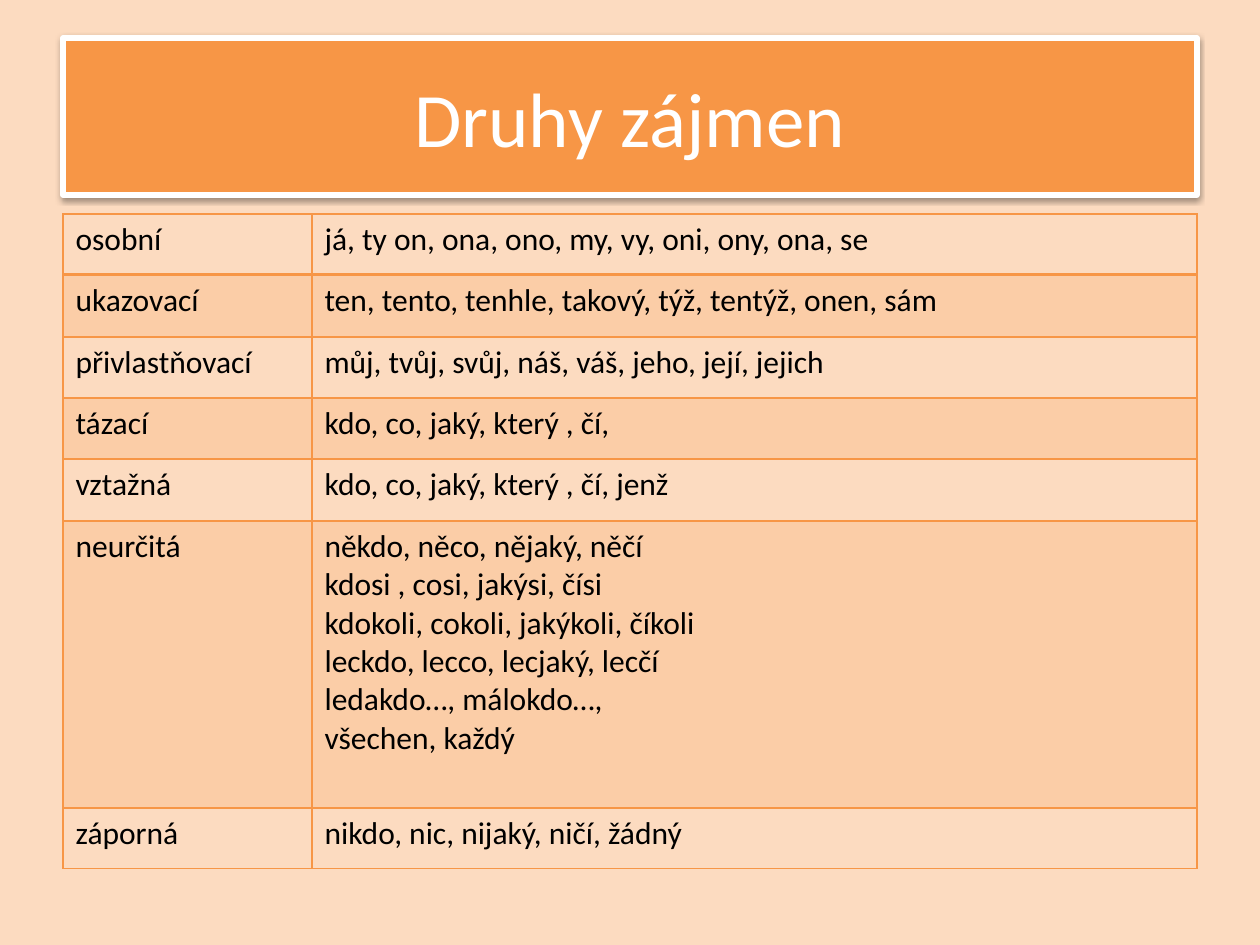
from dataclasses import dataclass

from lxml.etree import SubElement
from pptx import Presentation
from pptx.dml.color import RGBColor
from pptx.enum.shapes import MSO_SHAPE as Shape
from pptx.enum.text import MSO_ANCHOR as Anchor, PP_ALIGN as Align
from pptx.oxml import parse_xml
from pptx.oxml.ns import nsdecls, qn
from pptx.util import Pt

SCALE = 914400 / 126


@dataclass(frozen=True)
class Theme:
    font: str = "Calibri"
    background: str = "FCDBC0"
    accent: str = "F79646"
    light: str = "FFFFFF"
    dark: str = "000000"
    title_size: int = 44
    body_size: int = 18
    band_opacity: int = 20


THEME = Theme()

PRONOUNS = [
    ("osobní", "já, ty on, ona, ono, my, vy, oni, ony, ona, se"),
    ("ukazovací", "ten, tento, tenhle, takový, týž, tentýž, onen, sám"),
    ("přivlastňovací", "můj, tvůj, svůj, náš, váš, jeho, její, jejich"),
    ("tázací", "kdo, co, jaký, který , čí,"),
    ("vztažná", "kdo, co, jaký, který , čí, jenž"),
    ("neurčitá", "někdo, něco, nějaký, něčí\n"
                 "kdosi , cosi, jakýsi, čísi\n"
                 "kdokoli, cokoli, jakýkoli, číkoli\n"
                 "leckdo, lecco, lecjaký, lecčí\n"
                 "ledakdo…, málokdo…,\n"
                 "všechen, každý"),
    ("záporná", "nikdo, nic, nijaký, ničí, žádný"),
]
COLUMN_WIDTHS = [249, 885]
ROW_HEIGHTS = [61, 62, 61, 61, 62, 287, 61]


def px(length):
    return round(length * SCALE)


def color(value):
    return RGBColor.from_string(value)


def write_text(text_frame, text, size, text_color, align):
    text_frame.text = text
    for paragraph in text_frame.paragraphs:
        paragraph.alignment = align
        paragraph.font.name = THEME.font
        paragraph.font.size = Pt(size)
        paragraph.font.color.rgb = color(text_color)


def add_shadow(shape):
    shape.shadow.inherit = False
    effects = shape._element.spPr.find(qn("a:effectLst"))
    effects.append(parse_xml(
        f'<a:outerShdw {nsdecls("a")} blurRad="{Pt(3.1)}" dist="{Pt(1.6)}" '
        f'dir="5400000" rotWithShape="0"><a:srgbClr val="{THEME.dark}">'
        '<a:alpha val="38000"/></a:srgbClr></a:outerShdw>'))


def add_title(slide, text, left, top, width, height):
    shape = slide.shapes.add_shape(
        Shape.RECTANGLE, px(left), px(top), px(width), px(height))
    shape.fill.solid()
    shape.fill.fore_color.rgb = color(THEME.accent)
    shape.line.color.rgb = color(THEME.light)
    shape.line.width = Pt(3)
    add_shadow(shape)
    shape.text_frame.word_wrap = True
    shape.text_frame.vertical_anchor = Anchor.MIDDLE
    write_text(shape.text_frame, text, THEME.title_size, THEME.light, Align.CENTER)


def fill_cell(cell, banded):
    if not banded:
        cell.fill.background()
        return
    cell.fill.solid()
    cell.fill.fore_color.rgb = color(THEME.accent)
    fill_color = cell._tc.tcPr.find(".//" + qn("a:srgbClr"))
    SubElement(fill_color, qn("a:alpha"), val=str(THEME.band_opacity * 1000))


def set_borders(cell, top, bottom):
    widths = {"lnL": 1, "lnR": 1, "lnT": top, "lnB": bottom}
    for position, (side, width) in enumerate(widths.items()):
        cell._tc.get_or_add_tcPr().insert(position, parse_xml(
            f'<a:{side} {nsdecls("a")} w="{Pt(width)}"><a:solidFill>'
            f'<a:srgbClr val="{THEME.accent}"/></a:solidFill></a:{side}>'))


def add_pronoun_table(slide, rows, left, top, width, height):
    table = slide.shapes.add_table(
        len(rows), len(COLUMN_WIDTHS), px(left), px(top), px(width), px(height)).table
    table.first_row = False
    table.horz_banding = False
    for column, column_width in zip(table.columns, COLUMN_WIDTHS):
        column.width = px(column_width)
    for index, (row, row_height, texts) in enumerate(zip(table.rows, ROW_HEIGHTS, rows)):
        row.height = px(row_height)
        for cell, text in zip(row.cells, texts):
            write_text(cell.text_frame, text, THEME.body_size, THEME.dark, Align.LEFT)
            fill_cell(cell, banded=index % 2 == 1)
            set_borders(cell, top=2 if index == 1 else 1, bottom=2 if index == 0 else 1)


def main():
    presentation = Presentation()
    presentation.slide_width = px(1260)
    presentation.slide_height = px(945)
    slide = presentation.slides.add_slide(presentation.slide_layouts[6])
    slide.background.fill.solid()
    slide.background.fill.fore_color.rgb = color(THEME.background)
    add_title(slide, "Druhy zájmen", 63, 38, 1134, 157)
    add_pronoun_table(slide, PRONOUNS, 63, 214, sum(COLUMN_WIDTHS), sum(ROW_HEIGHTS))
    presentation.save("out.pptx")


if __name__ == "__main__":
    main()
